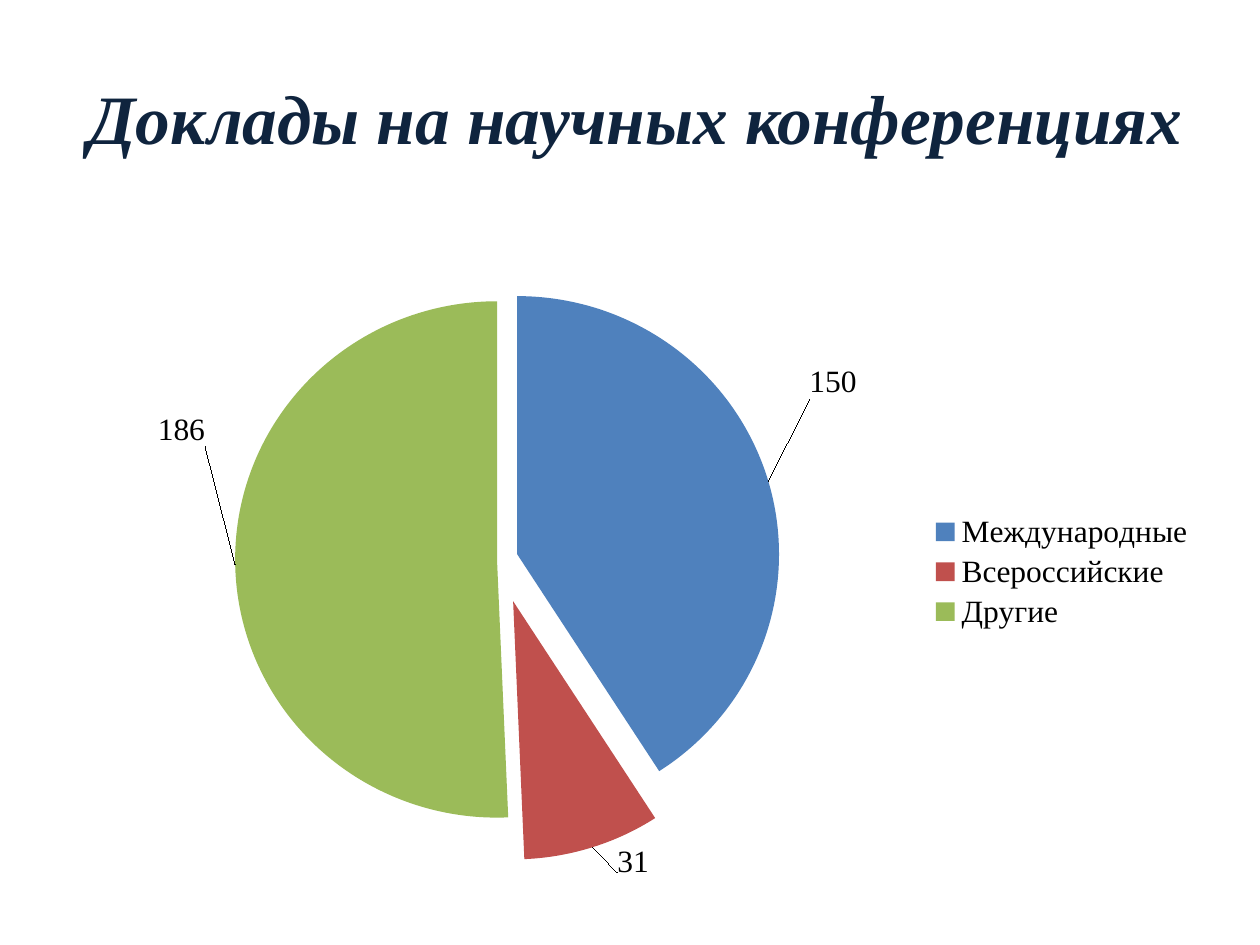
from lxml import etree
from pptx import Presentation
from pptx.chart.data import CategoryChartData
from pptx.dml.color import RGBColor
from pptx.enum.chart import XL_CHART_TYPE, XL_LABEL_POSITION, XL_LEGEND_POSITION
from pptx.enum.text import MSO_ANCHOR, PP_ALIGN
from pptx.oxml.ns import qn
from pptx.util import Cm, Pt

PIE = XL_CHART_TYPE.PIE
OUTSIDE = XL_LABEL_POSITION.OUTSIDE_END
RIGHT = XL_LEGEND_POSITION.RIGHT
MIDDLE = MSO_ANCHOR.MIDDLE
CENTER = PP_ALIGN.CENTER


def rgb(value):
    """Turn a hex string into a colour."""
    return RGBColor.from_string(value)


def format_font(font, name="Times New Roman", size=18, color="000000", bold=False, italic=False):
    """Apply the text format to a font."""
    font.name, font.size = name, Pt(size)
    font.bold, font.italic = bold, italic
    font.color.rgb = rgb(color)


def set_layout(parent, index, **values):
    """Give a chart part a manual layout as fractions of the chart."""
    for old in parent.findall(qn("c:layout")):
        parent.remove(old)
    layout = etree.Element(qn("c:layout"))
    manual = etree.SubElement(layout, qn("c:manualLayout"))
    for tag, value in values.items():
        etree.SubElement(manual, qn(f"c:{tag}")).set("val", str(value))
    parent.insert(index, layout)


class Deck:
    """Hold the style and the current slide."""

    def __init__(self, prs):
        """Start a blank slide."""
        self.s = prs.slides.add_slide(prs.slide_layouts[6])
        self.title_color = "0F243E"

    def title(self, text, x, y, w, h):
        """Add the centred heading."""
        tf = self.s.shapes.add_textbox(Cm(x), Cm(y), Cm(w), Cm(h)).text_frame
        tf.word_wrap = True
        tf.vertical_anchor = MIDDLE
        p = tf.paragraphs[0]
        p.alignment = CENTER
        r = p.add_run()
        r.text = text
        format_font(r.font, size=39.6, color=self.title_color, bold=True, italic=True)

    def pie(self, slices, x, y, w, h):
        """Add an exploded pie with a legend and moved value labels."""
        data = CategoryChartData()
        data.categories = [item[0] for item in slices]
        data.add_series("Series 1", [item[1] for item in slices])
        chart = self.s.shapes.add_chart(PIE, Cm(x), Cm(y), Cm(w), Cm(h), data).chart
        format_font(chart.font, name="Calibri")
        chart.has_title = False
        chart.has_legend = True
        chart.legend.position = RIGHT
        chart.legend.include_in_layout = False
        format_font(chart.legend.font)
        plot = chart.plots[0]
        plot.vary_by_categories = True
        series = plot.series[0]
        labels = series.data_labels
        labels.show_value = True
        format_font(labels.font)
        for i, (_, _, color, explosion, dx, dy) in enumerate(slices):
            point = series.points[i]
            fill = point.format.fill
            fill.solid()
            fill.fore_color.rgb = rgb(color)
            dpt = series._element.findall(qn("c:dPt"))[i]
            node = etree.Element(qn("c:explosion"))
            node.set("val", str(explosion))
            dpt.find(qn("c:spPr")).addprevious(node)
            label = point.data_label
            format_font(label.font)
            label.position = OUTSIDE
            dlbl = labels._element.findall(qn("c:dLbl"))[i]
            set_layout(dlbl, 1, x=dx, y=dy)
        area = chart._chartSpace.find(f".//{qn('c:plotArea')}")
        set_layout(area, 0, layoutTarget="inner", xMode="edge", yMode="edge",
                   x=0.14, y=0.06, w=0.47, h=0.84)


def main():
    """Build and save the slide."""
    prs = Presentation()
    prs.slide_width, prs.slide_height = Cm(25.4), Cm(19.05)
    deck = Deck(prs)
    deck.title("Доклады на научных конференциях", 0.51, 0.76, 24.61, 3.18)
    deck.pie([
        ("Международные", 150, "4F81BD", 7, 0.03, -0.13),
        ("Всероссийские", 31, "C0504D", 17, 0.02, 0.03),
        ("Другие", 186, "9BBB59", 1, -0.02, -0.22),
    ], 1.5, 5.33, 22.86, 12.57)
    prs.save("out.pptx")


if __name__ == "__main__":
    main()
